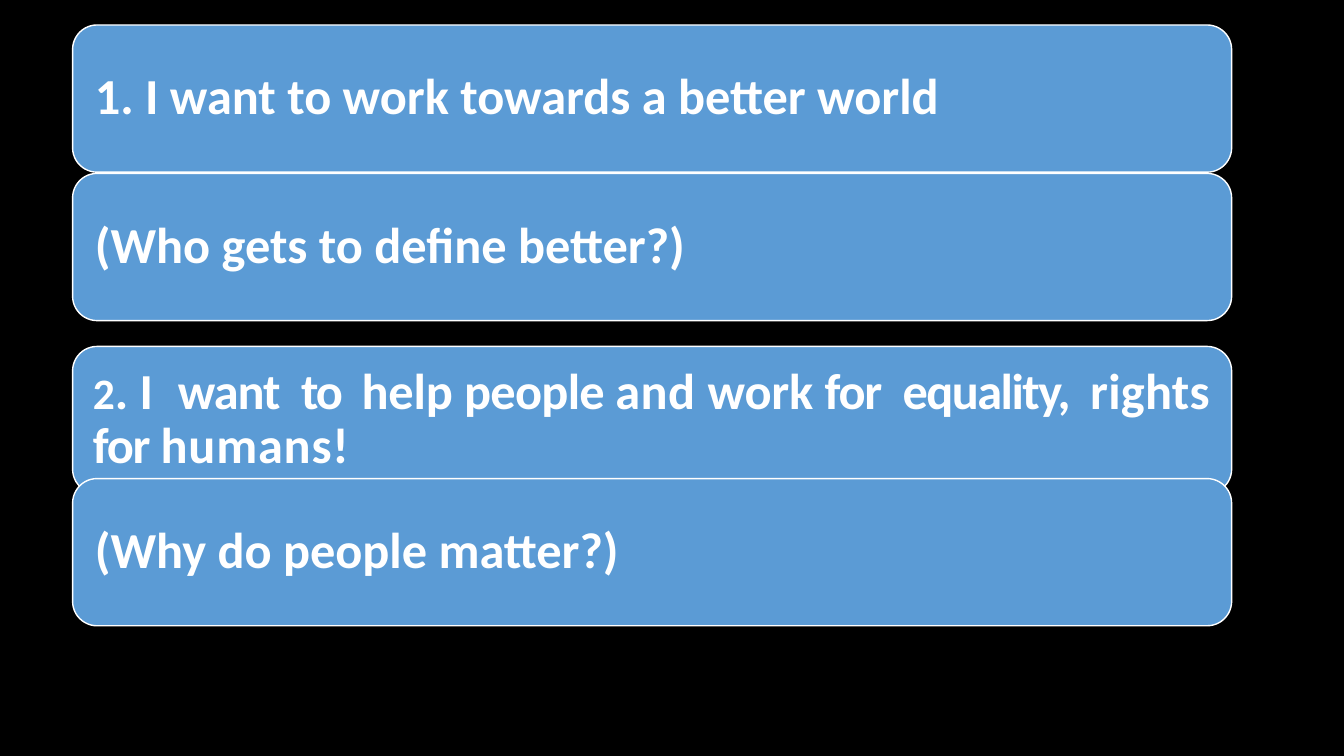
from pptx import Presentation
from pptx.dml.color import RGBColor
from pptx.enum.shapes import MSO_SHAPE
from pptx.enum.text import MSO_ANCHOR, PP_ALIGN
from pptx.util import Cm, Pt

ROUND = MSO_SHAPE.ROUNDED_RECTANGLE
MIDDLE = MSO_ANCHOR.MIDDLE
LEFT = PP_ALIGN.LEFT
BLACK = RGBColor(0x00, 0x00, 0x00)
BLUE = RGBColor(0x5B, 0x9B, 0xD5)
WHITE = RGBColor(0xFF, 0xFF, 0xFF)

GOAL = [
    ("2", 31, 0), (". ", 36, 0), ("I ", 36, 4.8),
    ("want", 36, -0.8), (" ", 36, 6.5), ("to", 36, -1.5), (" ", 36, 5.1),
    ("help ", 36, -0.1), ("people ", 36, -0.5), ("and ", 36, 0.3),
    ("work ", 36, -0.1), ("for", 36, -0.9), (" ", 36, 6.3),
    ("equality,", 36, -1.1), (" ", 36, 5.9), ("rights ", 36, 0.2),
    ("for ", 36, -0.9), ("humans!", 36, 0.6),
]
CARDS = [
    (0.63, 0.38, [("1. I want to work towards a better world", 36, 0)]),
    (4.37, 0.38, [("(Who gets to define better?)", 36, 0)]),
    (8.73, 0.33, GOAL),
    (12.06, 0.38, [("(Why do people matter?)", 36, 0)]),
]
X, WIDTH, HEIGHT = 1.83, 29.21, 3.71


def add_card(slide, top, inset, runs):
    card = slide.shapes.add_shape(ROUND, Cm(X), Cm(top), Cm(WIDTH), Cm(HEIGHT))
    card.shadow.inherit = False
    card.fill.solid()
    card.fill.fore_color.rgb = BLUE
    card.line.color.rgb = WHITE
    card.line.width = Pt(1)
    frame = card.text_frame
    frame.word_wrap = True
    frame.vertical_anchor = MIDDLE
    for side in ("left", "top", "right", "bottom"):
        setattr(frame, f"margin_{side}", Cm(inset))
    para = frame.paragraphs[0]
    para.alignment = LEFT
    para.line_spacing = 0.9
    for text, size, gap in runs:
        run = para.add_run()
        run.text = text
        style = {"name": "Calibri", "size": Pt(size), "bold": True}
        for key, value in style.items():
            setattr(run.font, key, value)
        run.font.color.rgb = WHITE
        if gap:
            run.font._element.set("spc", str(round(gap * 100)))


def main():
    deck = Presentation()
    deck.slide_width, deck.slide_height = Cm(33.87), Cm(19.05)
    slide = deck.slides.add_slide(deck.slide_layouts[6])
    back = slide.background.fill
    back.solid()
    back.fore_color.rgb = BLACK
    for top, inset, runs in CARDS:
        add_card(slide, top, inset, runs)
    deck.save("out.pptx")


if __name__ == "__main__":
    main()
